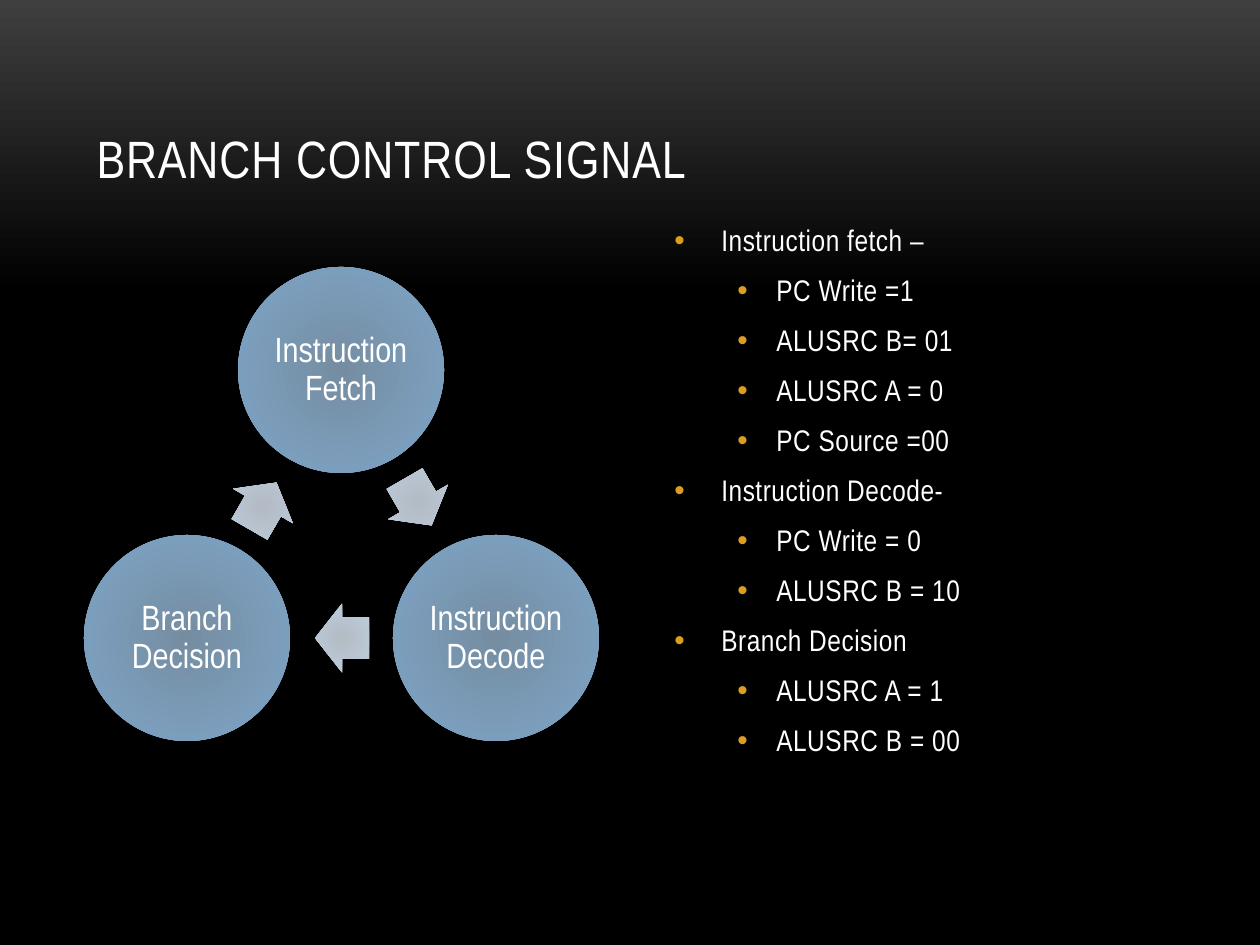
"""Build the branch control signal slide with its three-stage cycle."""
from lxml.etree import SubElement
from pptx import Presentation
from pptx.dml.color import RGBColor
from pptx.enum.shapes import MSO_SHAPE as Shape
from pptx.enum.text import MSO_ANCHOR as Anchor, MSO_AUTO_SIZE as AutoSize, PP_ALIGN as Align
from pptx.oxml.ns import qn
from pptx.util import Pt

PX = 914400 / 126
WHITE = RGBColor(0xFF, 0xFF, 0xFF)
BLACK = RGBColor(0x00, 0x00, 0x00)
CHARCOAL = RGBColor(0x3F, 0x3F, 0x3F)
GOLD = RGBColor(0xDC, 0x9E, 0x1F)
STAGE_COLORS = RGBColor(0x75, 0x8D, 0xA1), RGBColor(0x7F, 0xA6, 0xCA)
ARROW_COLORS = RGBColor(0xB3, 0xBB, 0xC4), RGBColor(0xBF, 0xCF, 0xE0)
DIAMETER = 206
ARROW_LENGTH, ARROW_WIDTH = 54, 69

STAGES = [
    ("Instruction Fetch", (341, 370), (418, 502), 60),
    ("Instruction Decode", (496, 638), (342, 638), 180),
    ("Branch Decision", (187, 638), (263, 506), 300),
]
SIGNALS = [
    ("Instruction fetch –", ["PC Write =1", "ALUSRC B= 01", "ALUSRC A = 0", "PC Source =00"]),
    ("Instruction Decode-", ["PC Write = 0", "ALUSRC B = 10"]),
    ("Branch Decision", ["ALUSRC A = 1", "ALUSRC B = 00"]),
]


def write(paragraph, text, size, align=Align.LEFT, spacing=0, line=None,
          before=0, after=0, level=0, bullet=None):
    paragraph.alignment = align
    paragraph.line_spacing = line
    paragraph.space_before, paragraph.space_after = Pt(before), Pt(after)
    paragraph.level = level
    if bullet:
        margin, hanging = bullet
        properties = paragraph._p.get_or_add_pPr()
        properties.set("marL", str(round(margin * PX)))
        properties.set("indent", str(round(-hanging * PX)))
        color = SubElement(properties, qn("a:buClr"))
        SubElement(color, qn("a:srgbClr"), val=str(GOLD))
        SubElement(properties, qn("a:buFont"), typeface="Arial")
        SubElement(properties, qn("a:buChar"), char="•")
    run = paragraph.add_run()
    run.text = text
    run.font.name, run.font.size = "Arial Narrow", Pt(size)
    run.font.color.rgb = WHITE
    if spacing:
        run._r.get_or_add_rPr().set("spc", str(spacing))


def shade(fill, element, stops, radial=True):
    fill.gradient()
    gradient = element.find(".//" + qn("a:gradFill"))
    for child in list(gradient):
        gradient.remove(child)
    stop_list = SubElement(gradient, qn("a:gsLst"))
    for percent, color in stops:
        stop = SubElement(stop_list, qn("a:gs"), pos=str(percent * 1000))
        SubElement(stop, qn("a:srgbClr"), val=str(color))
    if radial:
        circle = SubElement(gradient, qn("a:path"), path="circle")
        SubElement(circle, qn("a:fillToRect"), dict.fromkeys("ltrb", "50000"))
    else:
        SubElement(gradient, qn("a:lin"), ang="5400000", scaled="0")


deck = Presentation()
deck.slide_width, deck.slide_height = round(1260 * PX), round(945 * PX)
slide = deck.slides.add_slide(deck.slide_layouts[5])
shade(slide.background.fill, slide.element,
      [(0, CHARCOAL), (31, BLACK), (100, BLACK)], radial=False)

title = slide.shapes.title
title.left, title.top, title.width, title.height = (round(v * PX) for v in (84, 38, 1092, 157))
title.text_frame.vertical_anchor = Anchor.BOTTOM
title.text_frame.auto_size = AutoSize.NONE
write(title.text_frame.paragraphs[0], "BRANCH CONTROL SIGNAL", size=30, spacing=50)

signal_box = slide.shapes.add_textbox(*(round(v * PX) for v in (662, 220, 514, 567)))
signal_frame = signal_box.text_frame
signal_frame.word_wrap = True
rows = [row for stage, signals in SIGNALS
        for row in [(0, stage)] + [(1, signal) for signal in signals]]
for index, (level, text) in enumerate(rows):
    paragraph = signal_frame.add_paragraph() if index else signal_frame.paragraphs[0]
    write(paragraph, text, size=17, spacing=30, line=0.9, before=4.2 if index else 0,
          after=6, level=level, bullet=(102, 39) if level else (47, 47))

for label, (stage_x, stage_y), (arrow_x, arrow_y), angle in STAGES:
    stage = slide.shapes.add_shape(Shape.OVAL, *(round(v * PX) for v in (
        stage_x - DIAMETER / 2, stage_y - DIAMETER / 2, DIAMETER, DIAMETER)))
    arrow = slide.shapes.add_shape(Shape.RIGHT_ARROW, *(round(v * PX) for v in (
        arrow_x - ARROW_LENGTH / 2, arrow_y - ARROW_WIDTH / 2, ARROW_LENGTH, ARROW_WIDTH)))
    arrow.rotation = angle
    arrow.adjustments[0], arrow.adjustments[1] = 0.6, 0.5
    for part, (inner, outer) in ((stage, STAGE_COLORS), (arrow, ARROW_COLORS)):
        part.shadow.inherit = False
        part.line.fill.background()
        shade(part.fill, part.element, [(0, inner), (100, outer)])
    frame = stage.text_frame
    frame.word_wrap = True
    frame.vertical_anchor = Anchor.MIDDLE
    frame.margin_left = frame.margin_right = frame.margin_top = frame.margin_bottom = round(3 * PX)
    write(frame.paragraphs[0], label, size=20, align=Align.CENTER, line=0.9)

deck.save("out.pptx")
